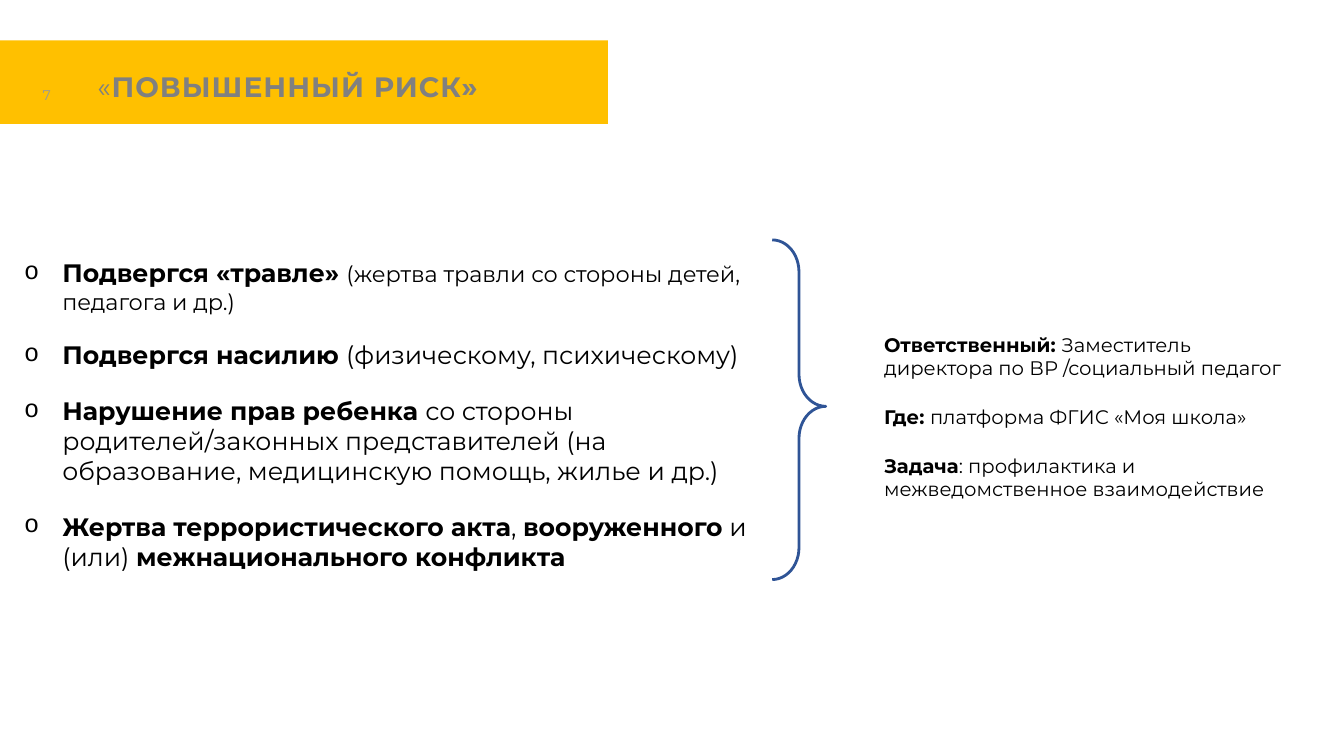
from lxml import etree
from pptx import Presentation
from pptx.dml.color import RGBColor
from pptx.enum.shapes import MSO_SHAPE
from pptx.oxml.ns import qn
from pptx.util import Inches, Pt

RECT = MSO_SHAPE.RECTANGLE
BRACE = MSO_SHAPE.RIGHT_BRACE
FACE = "Montserrat"
WIDE, HIGH = Inches(13.33), Inches(7.5)

RISKS = [
    ("*Подвергся «травле» *(жертва травли со стороны детей, педагога и др.)", 16),
    ("*Подвергся насилию *(физическому, психическому)", 18),
    ("*Нарушение прав ребенка *со стороны родителей/законных представителей "
     "(на образование, медицинскую помощь, жилье и др.)", 18),
    ("*Жертва террористического акта*, *вооруженного* и (или) "
     "*межнационального конфликта*", 18),
]
DUTIES = [
    ("*Ответственный: *Заместитель директора по ВР /социальный педагог", 14),
    ("*Где: *платформа ФГИС «Моя школа»", 14),
    ("*Задача*: профилактика и межведомственное взаимодействие", 14),
]


def color(code):
    """Turn a hex string into a colour."""
    return RGBColor.from_string(code)


def area(x, y, w, h):
    """Turn percentages of the slide into a box."""
    return tuple(round(side * part / 100)
                 for side, part in zip((WIDE, HIGH, WIDE, HIGH), (x, y, w, h)))


def within(box, x, y, w, h):
    """Return the part of a box given by shares of its size."""
    left, top, wide, high = box
    return (round(left + x * wide), round(top + y * high),
            round(w * wide), round(h * high))


def write(para, text, size, bold, tint="000000"):
    """Write a line whose starred parts are bold."""
    for i, part in enumerate(text.split("*")):
        if part:
            run = para.add_run()
            run.text = part
            font = run.font
            font.name = FACE
            font.bold = i % 2 == 1
            font.size = Pt(bold if font.bold else size)
            font.color.rgb = color(tint)


def frame(slide, box, inset=True, wrap=True):
    """Add a text box and return its text frame."""
    text = slide.shapes.add_textbox(*box).text_frame
    text.word_wrap = wrap
    if not inset:
        text.margin_left = text.margin_right = 0
        text.margin_top = text.margin_bottom = 0
    return text


def banner(slide, box):
    """Draw the yellow strip with page number and title."""
    strip = slide.shapes.add_shape(RECT, *box)
    strip.shadow.inherit = False
    strip.fill.solid()
    strip.fill.fore_color.rgb = color("FFC000")
    strip.line.fill.background()
    page = frame(slide, within(box, 0.07, 0.55, 0.02, 0.23), False, False)
    write(page.paragraphs[0], "7", 10, 10, "999999")
    title = frame(slide, within(box, 0.16, 0.35, 0.8, 0.4), False)
    para = title.paragraphs[0]
    write(para, "«*ПОВЫШЕННЫЙ РИСК»*", 20, 20, "808080")
    for run in para.runs:
        run.font._element.set("spc", "70")


def bullet(para):
    """Give a paragraph a hanging round bullet."""
    props = para._p.get_or_add_pPr()
    step = Inches(0.38)
    props.set("marL", str(step))
    props.set("indent", str(-step))
    etree.SubElement(props, qn("a:buFont")).set("typeface", "Courier New")
    etree.SubElement(props, qn("a:buChar")).set("char", "o")


def column(slide, box, items, bold, marks=False):
    """Fill a box with evenly spaced paragraphs."""
    text = frame(slide, box)
    for i, (line, size) in enumerate(items):
        para = text.add_paragraph() if i else text.paragraphs[0]
        para.space_after = Pt(18)
        if marks:
            bullet(para)
        write(para, line, size, bold)


def brace(slide, box):
    """Draw the brace that joins both columns."""
    shape = slide.shapes.add_shape(BRACE, *box)
    shape.shadow.inherit = False
    shape.fill.background()
    shape.line.color.rgb = color("2F5496")
    shape.line.width = Pt(2)
    shape.adjustments[0] = 0.6
    shape.adjustments[1] = 0.49


def main():
    """Build and save the slide."""
    deck = Presentation()
    deck.slide_width, deck.slide_height = WIDE, HIGH
    slide = deck.slides.add_slide(deck.slide_layouts[6])
    banner(slide, area(0, 5.33, 45.24, 11.07))
    column(slide, area(1.05, 33.4, 55.44, 43.3), RISKS, 18, True)
    column(slide, area(65.04, 43.33, 31.2, 23.73), DUTIES, 14)
    brace(slide, area(57.46, 31.73, 3.98, 44.93))
    deck.save("out.pptx")


if __name__ == "__main__":
    main()
